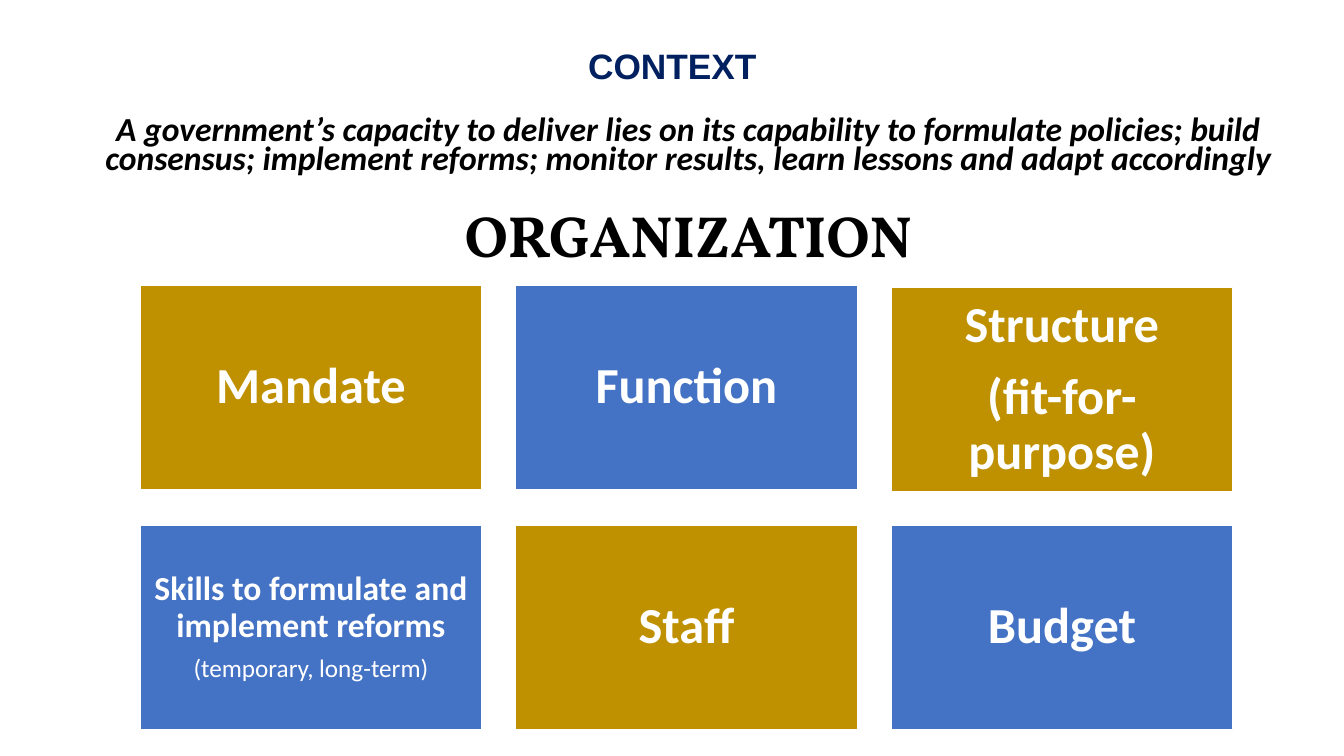
import pptx
import pptx.util
import pptx.dml.color
import pptx.enum.shapes
import pptx.enum.text

Pt = pptx.util.Pt
COLOURS = {"navy": "002060", "gold": "BF9000", "blue": "4472C4", "white": "FFFFFF", "black": "000000"}


def colour(name):
    return pptx.dml.color.RGBColor.from_string(COLOURS[name])


def write(para, text, size, font="Calibri", ink="white", bold=True, italic=False, spacing=0.9, before=0, after=0):
    para.alignment = pptx.enum.text.PP_ALIGN.CENTER
    para.line_spacing = spacing
    para.space_before = Pt(before)
    para.space_after = Pt(after)
    span = para.add_run()
    span.text = text
    span.font.size = Pt(size)
    span.font.name = font
    span.font.bold = bold
    span.font.italic = italic
    span.font.color.rgb = colour(ink)


deck = pptx.Presentation()
deck.slide_width = Pt(960)
deck.slide_height = Pt(540)
page = deck.slides.add_slide(deck.slide_layouts[5])

title = page.shapes.title
title.left, title.top, title.width, title.height = Pt(21.6), Pt(18.7), Pt(917.3), Pt(59.8)
title.text_frame.auto_size = pptx.enum.text.MSO_AUTO_SIZE.NONE
title.text_frame.vertical_anchor = pptx.enum.text.MSO_ANCHOR.MIDDLE
write(title.text_frame.paragraphs[0], "CONTEXT", 25.2, font="Arial", ink="navy")

tiles = [
    ("gold", 10.8, [("Mandate", 36, True)]),
    ("blue", 10.8, [("Function", 36, True)]),
    ("gold", 10.8, [("Structure", 36, True), ("(fit-for-purpose)", 36, True)]),
    ("blue", 7.2, [("Skills to formulate and implement reforms", 24, True), ("(temporary, long-term)", 18, False)]),
    ("gold", 10.8, [("Staff", 36, True)]),
    ("blue", 10.8, [("Budget", 36, True)]),
]
LEFT, TOP, WIDTH, HEIGHT = 100.1, 203.8, 244.1, 146.2
COLUMN_STEP, ROW_STEP = 268.2, 171.3

for index, (fill, inset, lines) in enumerate(tiles):
    row, column = divmod(index, 3)
    top = 205.2 if index == 2 else TOP + row * ROW_STEP
    box = page.shapes.add_shape(
        pptx.enum.shapes.MSO_SHAPE.RECTANGLE,
        Pt(LEFT + column * COLUMN_STEP), Pt(top), Pt(WIDTH), Pt(HEIGHT))
    box.shadow.inherit = False
    box.fill.solid()
    box.fill.fore_color.rgb = colour(fill)
    box.line.color.rgb = colour("white")
    box.line.width = Pt(1)
    frame = box.text_frame
    frame.word_wrap = True
    frame.vertical_anchor = pptx.enum.text.MSO_ANCHOR.MIDDLE
    frame.margin_left = frame.margin_right = frame.margin_top = frame.margin_bottom = Pt(inset)
    for number, (text, size, bold) in enumerate(lines):
        para = frame.add_paragraph() if number else frame.paragraphs[0]
        gap = 0.35 * size if number < len(lines) - 1 else 0
        write(para, text, size, bold=bold, after=gap)

statement = page.shapes.add_shape(
    pptx.enum.shapes.MSO_SHAPE.RECTANGLE, Pt(33.1), Pt(79.2), Pt(917.3), Pt(109.4))
statement.shadow.inherit = False
statement.fill.background()
statement.line.color.rgb = colour("white")
statement.line.width = Pt(0.75)
frame = statement.text_frame
frame.word_wrap = True
frame.vertical_anchor = pptx.enum.text.MSO_ANCHOR.TOP
frame.margin_top = Pt(6)
write(
    frame.paragraphs[0],
    "A government’s capacity to deliver lies on its capability to formulate policies; build consensus; "
    "implement reforms; monitor results, learn lessons and adapt accordingly",
    24, ink="black", italic=True, spacing=0.7)
write(frame.add_paragraph(), "ORGANIZATION", 41.5, font="Vollkorn", ink="black", spacing=0.7, before=30.7)

deck.save("out.pptx")
